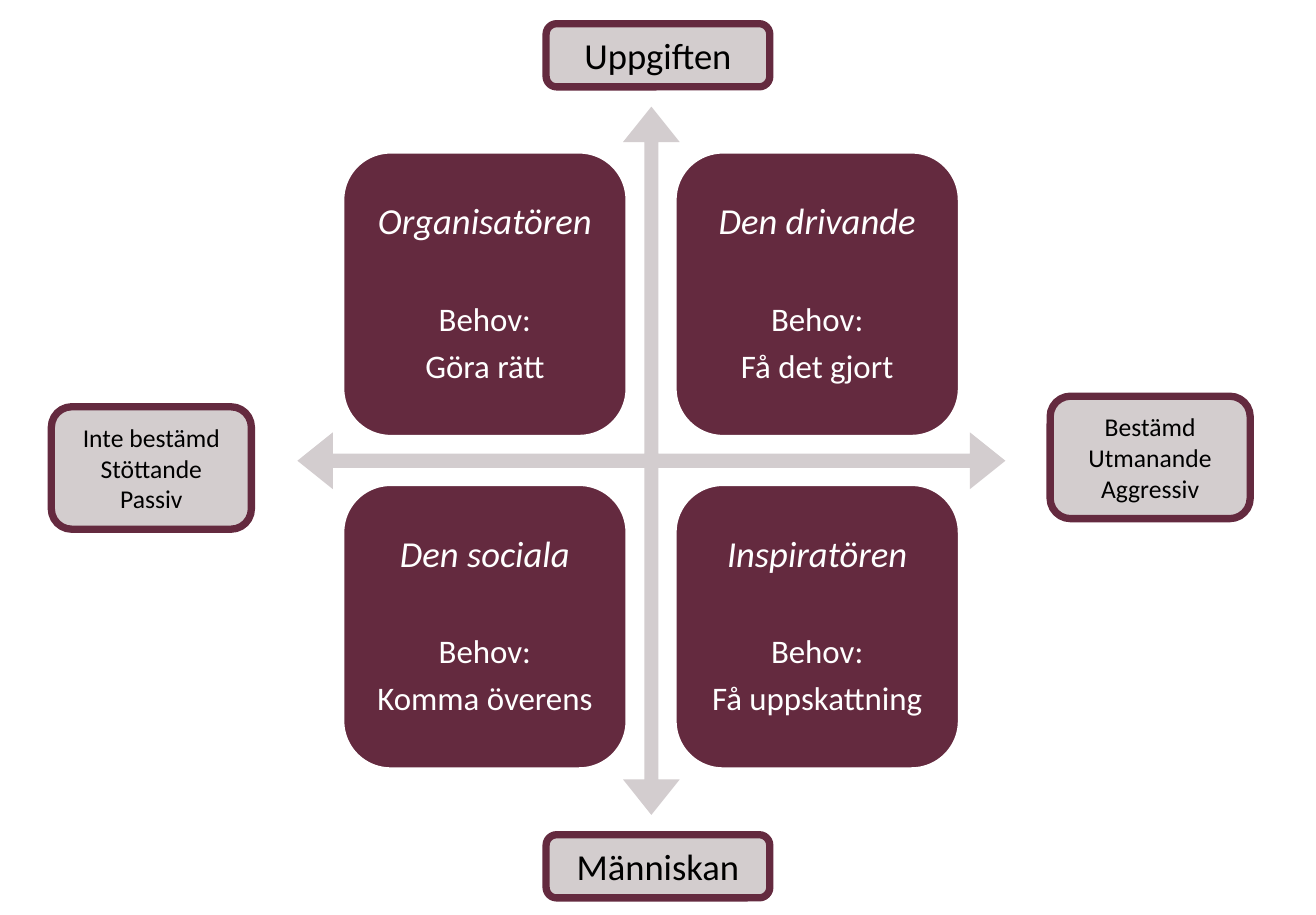
from dataclasses import dataclass

from pptx import Presentation
from pptx.dml.color import RGBColor
from pptx.enum.shapes import MSO_SHAPE as Preset
from pptx.enum.text import MSO_ANCHOR as Anchor, PP_ALIGN as Align
from pptx.shapes.autoshape import Shape
from pptx.slide import Slide
from pptx.util import Inches, Pt

FONT = "Calibri"
PLUM, GREY, LABEL_GREY = "642A3F", "D3CDCF", "D3CDCE"
WHITE, BLACK = "FFFFFF", "000000"

# Matrix of styles
MATRIX_LEFT, MATRIX_TOP = 2.61, 1.16
BOX_SIZE, BOX_STEP = 2.15, 2.525
BOX_INSET = 0.14


@dataclass
class Style:
    column: int
    row: int
    name: str
    need: str


@dataclass
class AxisLabel:
    left: float
    top: float
    width: float
    height: float
    text: str
    size: int


STYLES = [
    Style(0, 0, "Organisatören", "Göra rätt"),
    Style(1, 0, "Den drivande", "Få det gjort"),
    Style(0, 1, "Den sociala", "Komma överens"),
    Style(1, 1, "Inspiratören", "Få uppskattning"),
]

AXIS_LABELS = [
    AxisLabel(0.39, 3.09, 1.52, 0.93, "Inte bestämd\nStöttande\nPassiv", 14),
    AxisLabel(4.15, 0.18, 1.7, 0.48, "Uppgiften", 20),
    AxisLabel(4.15, 6.34, 1.7, 0.48, "Människan", 20),
    AxisLabel(7.98, 3.01, 1.52, 0.93, "Bestämd\nUtmanande\nAggressiv", 14),
]


def color(value: str) -> RGBColor:
    return RGBColor.from_string(value)


def add_preset(slide: Slide, preset: Preset, left: float, top: float,
               width: float, height: float, fill: str) -> Shape:
    shape = slide.shapes.add_shape(
        preset, Inches(left), Inches(top), Inches(width), Inches(height))
    shape.shadow.inherit = False
    shape.fill.solid()
    shape.fill.fore_color.rgb = color(fill)
    return shape


def set_line(shape: Shape, line: str, width: float) -> None:
    shape.line.color.rgb = color(line)
    shape.line.width = Pt(width)


def set_text(shape: Shape, text: str, size: int, text_color: str) -> None:
    frame = shape.text_frame
    frame.text = text
    frame.word_wrap = True
    frame.vertical_anchor = Anchor.MIDDLE
    for paragraph in frame.paragraphs:
        paragraph.alignment = Align.CENTER
        for run in paragraph.runs:
            run.font.name = FONT
            run.font.size = Pt(size)
            run.font.color.rgb = color(text_color)


def add_axes(slide: Slide) -> None:
    arrow = add_preset(slide, Preset.QUAD_ARROW, 2.26, 0.81, 5.38, 5.38, GREY)
    arrow.line.fill.background()
    for index, value in enumerate((0.02, 0.04, 0.05)):
        arrow.adjustments[index] = value


def add_style(slide: Slide, style: Style) -> None:
    box = add_preset(slide, Preset.ROUNDED_RECTANGLE,
                     MATRIX_LEFT + style.column * BOX_STEP,
                     MATRIX_TOP + style.row * BOX_STEP,
                     BOX_SIZE, BOX_SIZE, PLUM)
    set_line(box, WHITE, 1)
    set_text(box, f"{style.name}\nBehov:\n{style.need}", 18, WHITE)

    frame = box.text_frame
    frame.margin_left = frame.margin_right = Inches(BOX_INSET)
    frame.margin_top = frame.margin_bottom = Inches(BOX_INSET)
    for paragraph in frame.paragraphs:
        paragraph.line_spacing = 0.9
        paragraph.space_after = Pt(6)

    # The name stands apart from the need
    heading = frame.paragraphs[0]
    heading.space_after = Pt(33)
    heading.runs[0].font.size = Pt(20)
    heading.runs[0].font.italic = True


def add_axis_label(slide: Slide, label: AxisLabel) -> None:
    shape = add_preset(slide, Preset.ROUNDED_RECTANGLE, label.left, label.top,
                       label.width, label.height, LABEL_GREY)
    set_line(shape, PLUM, 4)
    set_text(shape, label.text, label.size, BLACK)


def main() -> None:
    presentation = Presentation()
    presentation.slide_width = Inches(10)
    presentation.slide_height = Inches(6.95)
    slide = presentation.slides.add_slide(presentation.slide_layouts[6])

    add_axes(slide)
    for style in STYLES:
        add_style(slide, style)
    for label in AXIS_LABELS:
        add_axis_label(slide, label)

    presentation.save("out.pptx")


if __name__ == "__main__":
    main()
